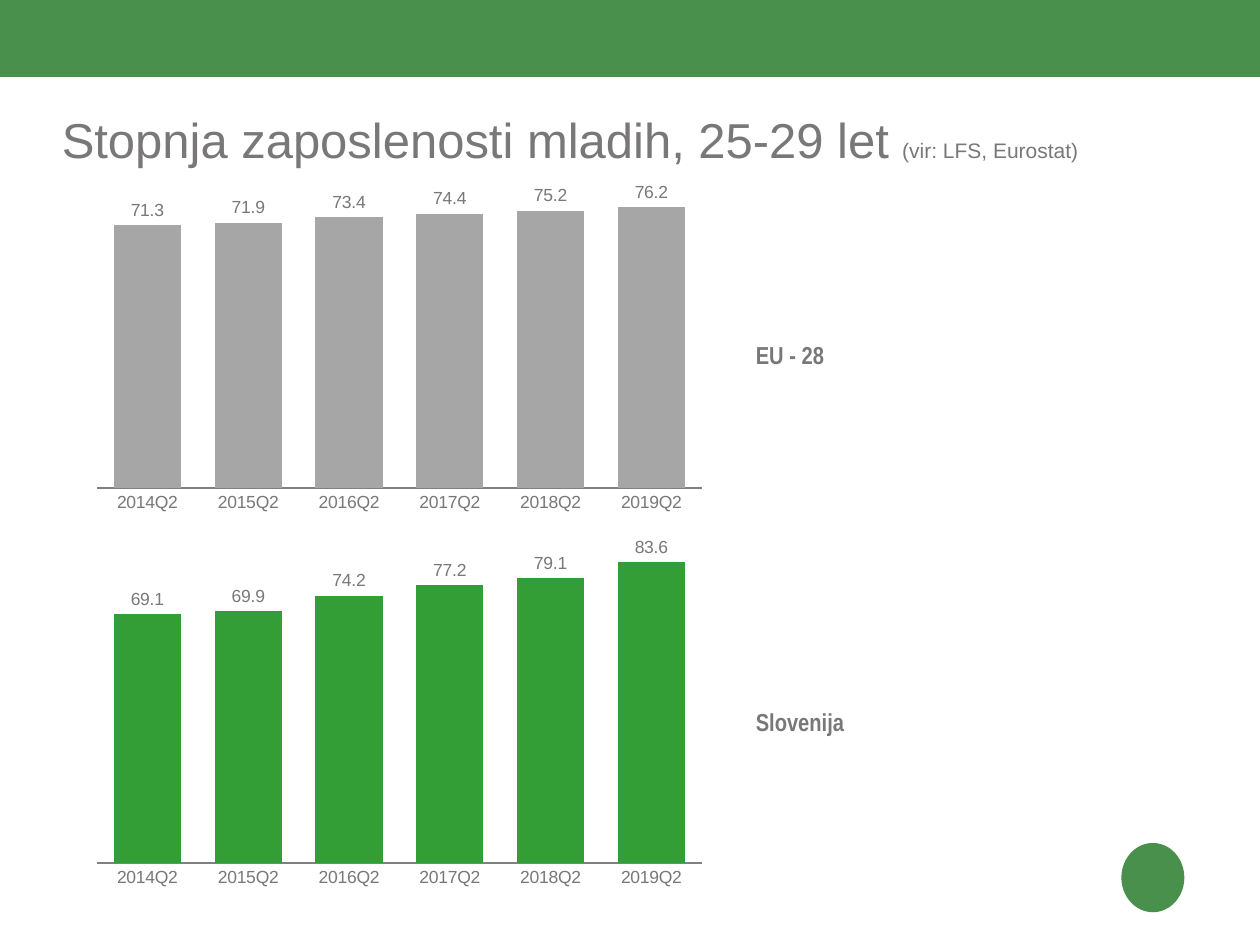
import pptx
import pptx.chart.data
import pptx.dml.color
import pptx.enum.chart
import pptx.enum.shapes
import pptx.enum.text
import pptx.oxml
import pptx.util

Inches, Pt = pptx.util.Inches, pptx.util.Pt
RGBColor = pptx.dml.color.RGBColor
XL = pptx.enum.chart

BRAND_GREEN = RGBColor(0x49, 0x90, 0x4D)
BAR_GREEN = RGBColor(0x33, 0x9E, 0x35)
BAR_GREY = RGBColor(0xA6, 0xA6, 0xA6)
AXIS_GREY = RGBColor(0x80, 0x80, 0x80)
TEXT_GREY = RGBColor(0x79, 0x77, 0x77)

QUARTERS = [f"{year}Q2" for year in range(2014, 2020)]
LAYOUT_XML = (
    '<c:layout xmlns:c="http://schemas.openxmlformats.org/drawingml/2006/chart">'
    '<c:manualLayout><c:layoutTarget val="inner"/>'
    '<c:xMode val="edge"/><c:yMode val="edge"/>'
    '<c:x val="0.02"/><c:y val="0.02"/><c:w val="0.96"/><c:h val="0.89"/>'
    '</c:manualLayout></c:layout>'
)


class SlideBuilder:
    """Holds the text style and the current slide."""

    font = {"name": "Arial", "bold": False}

    def __init__(self, slide):
        self.slide = slide

    def style(self, font, **changes):
        for key, value in {**self.font, **changes}.items():
            setattr(font, key, value)
        font.color.rgb = TEXT_GREY

    def frame(self, tf, **settings):
        for key, value in settings.items():
            setattr(tf, key, value)

    def block(self, shape, x, y, w, h):
        sp = self.slide.shapes.add_shape(
            shape, Inches(x), Inches(y), Inches(w), Inches(h))
        sp.shadow.inherit = False
        sp.fill.solid()
        sp.fill.fore_color.rgb = BRAND_GREEN
        sp.line.fill.background()

    def title(self, x, y, w, h, runs):
        sp = self.slide.shapes.title
        sp.left, sp.top, sp.width, sp.height = map(Inches, (x, y, w, h))
        self.frame(sp.text_frame, margin_left=0, margin_right=0,
                   margin_top=Inches(0.05), margin_bottom=0, word_wrap=True,
                   vertical_anchor=pptx.enum.text.MSO_ANCHOR.TOP,
                   auto_size=pptx.enum.text.MSO_AUTO_SIZE.NONE)
        p = sp.text_frame.paragraphs[0]
        p.alignment = pptx.enum.text.PP_ALIGN.LEFT
        for text, size in runs:
            r = p.add_run()
            r.text = text
            self.style(r.font, size=Pt(size))

    def label(self, x, y, w, h, text):
        sp = self.slide.shapes.add_textbox(
            Inches(x), Inches(y), Inches(w), Inches(h))
        self.frame(sp.text_frame, word_wrap=True,
                   auto_size=pptx.enum.text.MSO_AUTO_SIZE.SHAPE_TO_FIT_TEXT)
        r = sp.text_frame.paragraphs[0].add_run()
        r.text = text
        self.style(r.font, name="Arial Narrow", size=Pt(14), bold=True)

    def columns(self, x, y, w, h, name, values, color):
        data = pptx.chart.data.CategoryChartData(number_format="0.0")
        data.categories = QUARTERS
        data.add_series(name, values)
        chart = self.slide.shapes.add_chart(
            XL.XL_CHART_TYPE.COLUMN_CLUSTERED,
            Inches(x), Inches(y), Inches(w), Inches(h), data).chart
        chart.has_legend = False
        chart.has_title = False
        self.style(chart.font, size=Pt(10))

        # Axes: a baseline only, on a common scale
        for axis in (chart.category_axis, chart.value_axis):
            axis.major_tick_mark = axis.minor_tick_mark = XL.XL_TICK_MARK.NONE
            axis.has_major_gridlines = False
        chart.category_axis.format.line.color.rgb = AXIS_GREY
        chart.category_axis.format.line.width = Pt(1.5)
        value_axis = chart.value_axis
        value_axis.minimum_scale, value_axis.maximum_scale = 0, 90
        value_axis.tick_label_position = XL.XL_TICK_LABEL_POSITION.NONE
        value_axis.format.line.fill.background()

        # Bars and their value labels
        plot = chart.plots[0]
        plot.gap_width = 50
        plot.vary_by_categories = False
        fill = plot.series[0].format.fill
        fill.solid()
        fill.fore_color.rgb = color
        plot.has_data_labels = True
        labels = plot.data_labels
        labels.show_value = True
        labels.number_format = "0.0"
        labels.number_format_is_linked = False
        labels.position = XL.XL_LABEL_POSITION.OUTSIDE_END
        self.style(labels.font, size=Pt(10))

        # Fixed plot area
        area = chart.element.chart.plotArea
        for layout in area.xpath("c:layout"):
            area.remove(layout)
        area.insert(0, pptx.oxml.parse_xml(LAYOUT_XML))


def main():
    prs = pptx.Presentation()
    prs.slide_width, prs.slide_height = Inches(10), Inches(7.5)
    s = SlideBuilder(prs.slides.add_slide(prs.slide_layouts[5]))
    shapes = pptx.enum.shapes.MSO_SHAPE

    # Top band and plain emblem
    s.block(shapes.RECTANGLE, 0, -0.01, 10, 0.62)
    s.block(shapes.OVAL, 8.9, 6.69, 0.5, 0.55)

    s.title(0.49, 0.82, 9.26, 0.71, [
        ("Stopnja zaposlenosti mladih, 25-29 let ", 28),
        ("(vir: LFS, Eurostat)", 12),
    ])

    # One chart with its label per region
    regions = [
        ("EU - 28", 2.65, 1.18, 2.96, BAR_GREY,
         [71.3, 71.9, 73.4, 74.4, 75.2, 76.2]),
        ("Slovenija", 5.56, 4.22, 2.89, BAR_GREEN,
         [69.1, 69.9, 74.2, 77.2, 79.1, 83.6]),
    ]
    for name, label_y, chart_y, chart_h, color, values in regions:
        s.label(5.9, label_y, 1.69, 0.34, name)
        s.columns(0.67, chart_y, 5, chart_h, name, values, color)

    prs.save("out.pptx")


if __name__ == "__main__":
    main()
